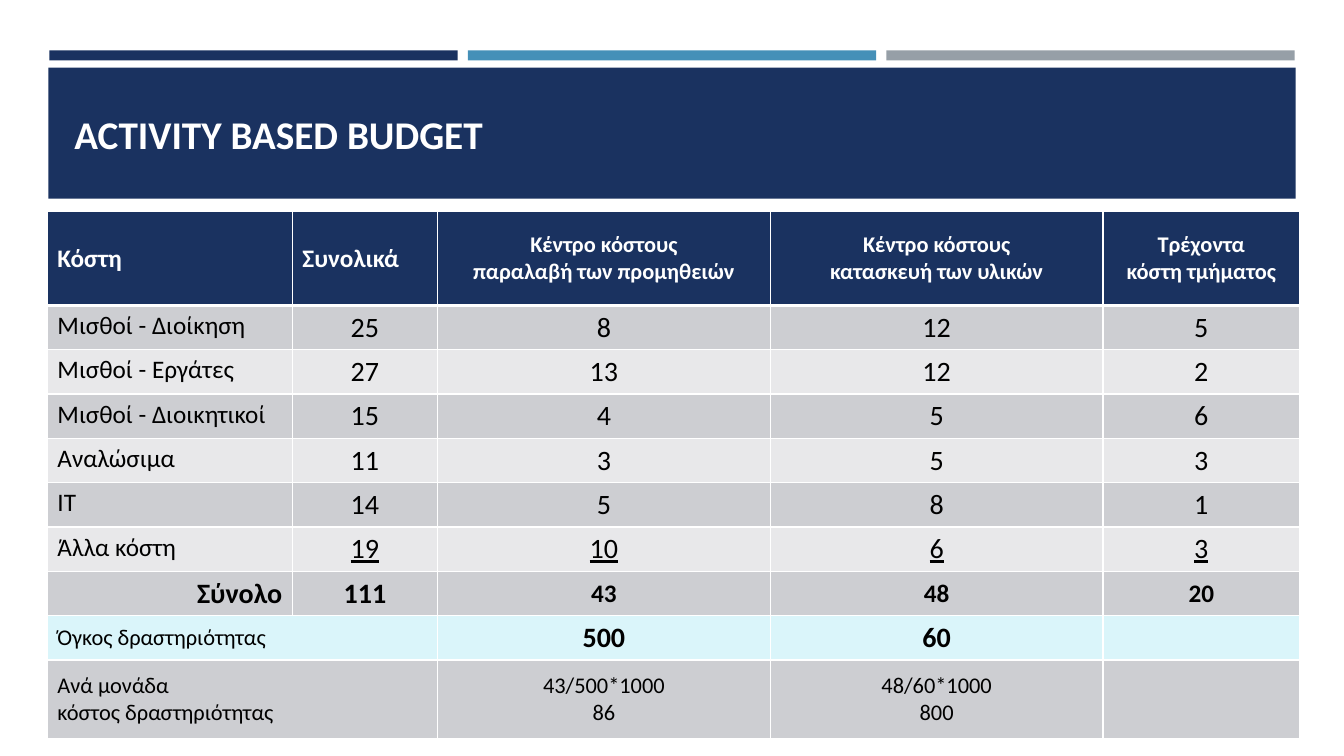
from lxml import etree
from pptx import Presentation
from pptx import util as u
from pptx.dml.color import RGBColor
from pptx.enum import shapes, text
from pptx.oxml import ns

COLORS = {
    "navy": "1A3260",
    "blue": "4590B8",
    "gray": "969FA7",
    "white": "FFFFFF",
    "black": "000000",
    "dark_band": "CDCED2",
    "light_band": "E8E8EA",
    "volume_band": "DAF5FA",
}
FONT = "Calibri"
LEFT, CENTER, RIGHT = text.PP_ALIGN.LEFT, text.PP_ALIGN.CENTER, text.PP_ALIGN.RIGHT
TOP, MIDDLE = text.MSO_ANCHOR.TOP, text.MSO_ANCHOR.MIDDLE

COLUMN_WIDTHS = [2.43, 1.44, 3.3, 3.3, 1.95]
ROW_HEIGHTS = [0.93] + [0.44] * 8 + [0.78]
HEADERS = [
    "Κόστη",
    "Συνολικά",
    "Κέντρο κόστους\nπαραλαβή των προμηθειών",
    "Κέντρο κόστους\nκατασκευή των υλικών",
    "Τρέχοντα\nκόστη τμήματος",
]
COSTS = [
    ("Μισθοί - Διοίκηση", 25, 8, 12, 5),
    ("Μισθοί - Εργάτες", 27, 13, 12, 2),
    ("Μισθοί - Διοικητικοί", 15, 4, 5, 6),
    ("Αναλώσιμα", 11, 3, 5, 3),
    ("ΙΤ", 14, 5, 8, 1),
    ("Άλλα κόστη", 19, 10, 6, 3),
]
TOTALS = ("Σύνολο", 111, 43, 48, 20)
VOLUMES = ("Όγκος δραστηριότητας", "", 500, 60, "")
UNIT_COSTS = (
    "Ανά μονάδα\nκόστος δραστηριότητας",
    "",
    "43/500*1000\n86",
    "48/60*1000\n800",
    "",
)


def rgb(name):
    return RGBColor.from_string(COLORS[name])


def add_bar(slide, left, top, width, height, color):
    bar = slide.shapes.add_shape(
        shapes.MSO_SHAPE.RECTANGLE,
        u.Inches(left), u.Inches(top), u.Inches(width), u.Inches(height),
    )
    bar.shadow.inherit = False
    bar.fill.solid()
    bar.fill.fore_color.rgb = rgb(color)
    bar.line.fill.background()


def write_text(frame, content, size, color="black", align=LEFT, bold=False, underline=False):
    for index, line in enumerate(str(content).split("\n")):
        paragraph = frame.add_paragraph() if index else frame.paragraphs[0]
        paragraph.alignment = align
        if not line:
            continue
        run = paragraph.add_run()
        run.text = line
        run.font.name = FONT
        run.font.size = u.Pt(size)
        run.font.bold = bold
        run.font.underline = underline
        run.font.color.rgb = rgb(color)


def add_title(slide, content):
    box = slide.shapes.add_textbox(u.Inches(0.64), u.Inches(0.77), u.Inches(12.06), u.Inches(1.11))
    box.text_frame.word_wrap = True
    box.text_frame.vertical_anchor = MIDDLE
    write_text(box.text_frame, content, 28, "white", bold=True)


def style_cell(cell, fill, top_width=1, bottom_width=1):
    cell.fill.solid()
    cell.fill.fore_color.rgb = rgb(fill)
    properties = cell._tc.get_or_add_tcPr()
    widths = {"lnL": 1, "lnR": 1, "lnT": top_width, "lnB": bottom_width}
    for index, (side, width) in enumerate(widths.items()):
        border = etree.Element(ns.qn(f"a:{side}"), w=str(u.Pt(width)))
        solid = etree.SubElement(border, ns.qn("a:solidFill"))
        etree.SubElement(solid, ns.qn("a:srgbClr"), val=COLORS["white"])
        properties.insert(index, border)


def fill_cell(cell, content, size, anchor=MIDDLE, **style):
    cell.vertical_anchor = anchor
    write_text(cell.text_frame, content, size, **style)


def add_budget_table(slide):
    table = slide.shapes.add_table(
        len(ROW_HEIGHTS), len(COLUMN_WIDTHS),
        u.Inches(0.47), u.Inches(2.1),
        u.Inches(sum(COLUMN_WIDTHS)), u.Inches(sum(ROW_HEIGHTS)),
    ).table
    for column, width in zip(table.columns, COLUMN_WIDTHS):
        column.width = u.Inches(width)
    for row, height in zip(table.rows, ROW_HEIGHTS):
        row.height = u.Inches(height)

    bands = ["navy"] + ["dark_band", "light_band"] * 3 + ["dark_band", "volume_band", "dark_band"]
    for index, (row, band) in enumerate(zip(table.rows, bands)):
        for cell in row.cells:
            style_cell(cell, band, 3 if index == 1 else 1, 3 if index == 0 else 1)

    for index, header in enumerate(HEADERS):
        size, align = (18, LEFT) if index < 2 else (16, CENTER)
        fill_cell(table.cell(0, index), header, size, color="white", align=align, bold=True)

    for row, (label, *amounts) in enumerate(COSTS, 1):
        fill_cell(table.cell(row, 0), label, 18, TOP)
        for column, amount in enumerate(amounts, 1):
            fill_cell(table.cell(row, column), amount, 20, align=CENTER, underline=row == len(COSTS))

    fill_cell(table.cell(7, 0), TOTALS[0], 20, TOP, align=RIGHT, bold=True)
    for column, amount in enumerate(TOTALS[1:], 1):
        fill_cell(table.cell(7, column), amount, 20 if column == 1 else 18, align=CENTER, bold=True)

    for row, values, size, bold in ((8, VOLUMES, 20, True), (9, UNIT_COSTS, 16, False)):
        table.cell(row, 0).merge(table.cell(row, 1))
        fill_cell(table.cell(row, 0), values[0], 16)
        for column in range(2, len(values)):
            fill_cell(table.cell(row, column), values[column], size, align=CENTER, bold=bold)


def main():
    presentation = Presentation()
    presentation.slide_width = u.Inches(13.33)
    presentation.slide_height = u.Inches(7.5)
    slide = presentation.slides.add_slide(presentation.slide_layouts[6])
    for index, color in enumerate(("navy", "blue", "gray")):
        add_bar(slide, 0.49 + 4.15 * index, 0.5, 4.05, 0.1, color)
    add_bar(slide, 0.48, 0.67, 12.37, 1.3, "navy")
    add_title(slide, "ACTIVITY BASED BUDGET")
    add_budget_table(slide)
    presentation.save("out.pptx")


if __name__ == "__main__":
    main()
